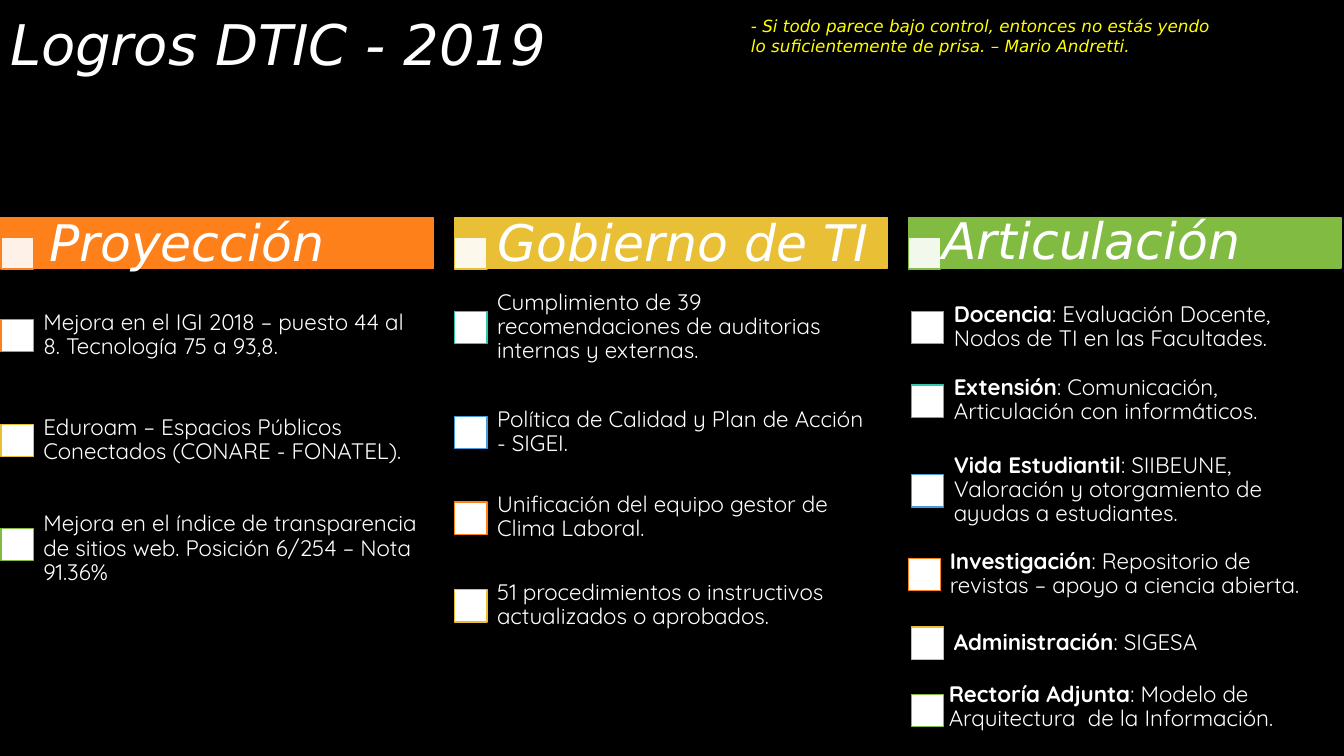
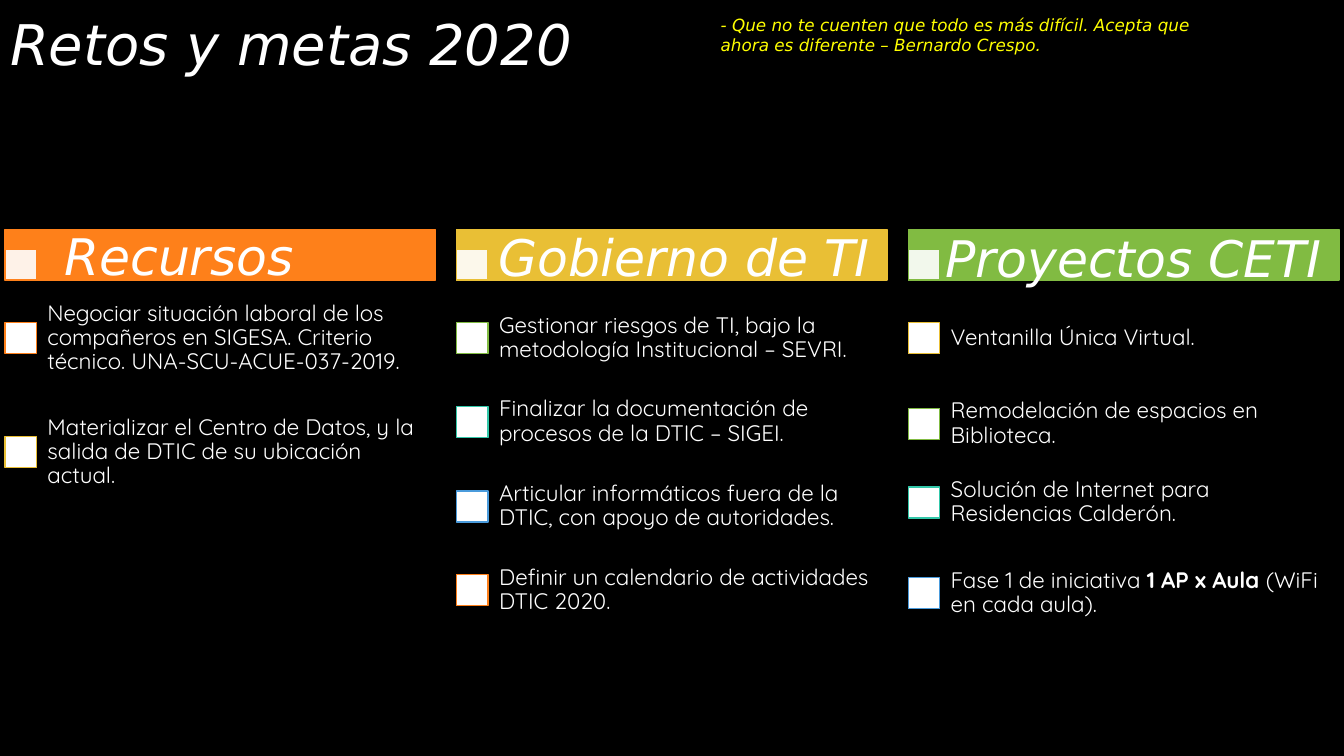
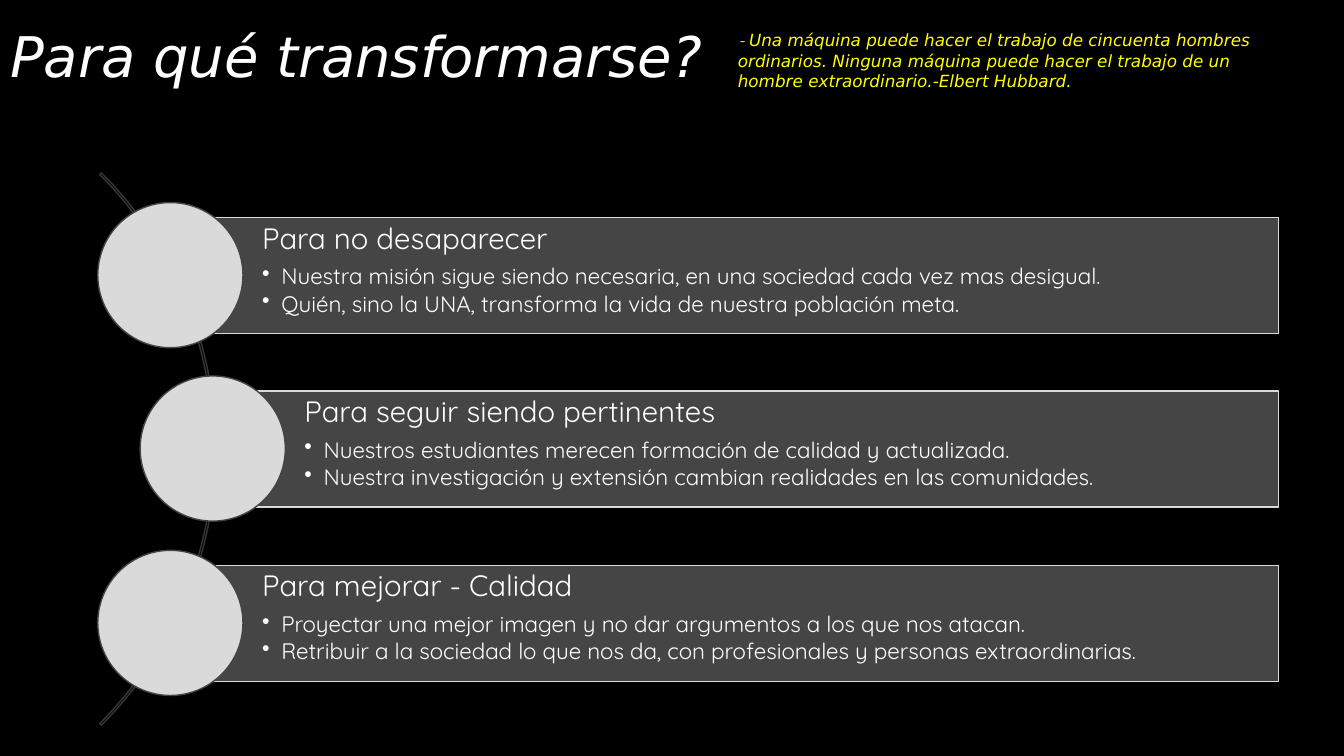
from dataclasses import dataclass

import pptx
import pptx.util
import pptx.dml.color
import pptx.enum.shapes
import pptx.enum.text
import pptx.oxml.ns
from lxml import etree

Pt = pptx.util.Pt
SHAPE = pptx.enum.shapes.MSO_SHAPE
ANCHOR = pptx.enum.text.MSO_ANCHOR
qn = pptx.oxml.ns.qn
EMU_PER_PX = 9144  # 100 px to the inch


# Shared style
@dataclass(frozen=True)
class Theme:
    black: str = "000000"
    white: str = "FFFFFF"
    yellow: str = "FFFF00"
    orange: str = "FE801A"
    gold: str = "E9BF35"
    green: str = "81BB42"
    teal: str = "32C7A9"
    blue: str = "4A9BDC"
    dark: str = "454545"
    arc: str = "373737"
    light: str = "DADADA"
    display: str = "DejaVu Sans"
    body: str = "Quicksand"
    title_size: int = 40
    heading_size: int = 36
    topic_size: int = 21
    body_size: int = 16
    quote_size: int = 12


T = Theme()


@dataclass
class Item:
    text: str  # bold parts stand between ** marks
    y: int
    color: str
    shift: int = 0  # marker offset from the column edge
    dx: int = 30  # text offset from the marker
    dy: int = -21


@dataclass
class Column:
    name: str
    name_box: tuple
    color: str
    items: list


def px(n):
    return pptx.util.Emu(n * EMU_PER_PX)


def rgb(color):
    return pptx.dml.color.RGBColor.from_string(color)


class Deck:
    def __init__(self):
        self.prs = pptx.Presentation()
        self.prs.slide_width, self.prs.slide_height = px(1333), px(750)
        fill = self.prs.slide_master.background.fill
        fill.solid()
        fill.fore_color.rgb = rgb(T.black)
        self.s = None

    def slide(self, title, top, width):
        self.s = self.prs.slides.add_slide(self.prs.slide_layouts[5])
        sp = self.s.shapes.title
        sp.left, sp.top, sp.width, sp.height = map(px, (0, top, width, 77))
        tf = self.frame(sp, (10, 5, 10, 5))
        self.add_text(tf.paragraphs[0], title, T.title_size, T.display, italic=True)

    def frame(self, sp, insets, anchor=ANCHOR.TOP):
        tf = sp.text_frame
        tf.word_wrap = True
        tf.auto_size = pptx.enum.text.MSO_AUTO_SIZE.NONE
        tf.vertical_anchor = anchor
        tf.margin_left, tf.margin_top, tf.margin_right, tf.margin_bottom = map(px, insets)
        return tf

    def add_text(self, p, text, size, font=T.body, color=T.white, italic=None):
        p.alignment = pptx.enum.text.PP_ALIGN.LEFT
        for i, part in enumerate(text.split("**")):
            if part:
                r = p.add_run()
                r.text = part
                r.font.size, r.font.name = Pt(size), font
                r.font.color.rgb = rgb(color)
                r.font.bold, r.font.italic = i % 2 == 1, italic

    def textbox(self, box, insets=(10, 5, 10, 5), anchor=ANCHOR.TOP):
        sp = self.s.shapes.add_textbox(*map(px, box))
        return self.frame(sp, insets, anchor).paragraphs[0]

    def quote(self, box, *parts):
        p = self.textbox(box)
        for text, font in parts:
            self.add_text(p, text, T.quote_size, font, T.yellow, True)

    def shape(self, kind, box, fill, line, opacity=None):
        sp = self.s.shapes.add_shape(kind, *map(px, box))
        sp.shadow.inherit = False
        if fill:
            sp.fill.solid()
            sp.fill.fore_color.rgb = rgb(fill)
        else:
            sp.fill.background()
        if opacity:
            clr = sp._element.spPr.find(qn("a:solidFill")).find(qn("a:srgbClr"))
            etree.SubElement(clr, qn("a:alpha")).set("val", str(opacity * 1000))
        sp.line.color.rgb = rgb(line)
        sp.line.width = Pt(1)
        return sp

    def item(self, x, item, marker, width):
        x += item.shift
        self.shape(SHAPE.RECTANGLE, (x, item.y, marker, marker), T.white, item.color)
        box = (x + item.dx, item.y + item.dy, width, 73)
        p = self.textbox(box, (12, 12, 12, 12), ANCHOR.MIDDLE)
        p.line_spacing = 0.9
        self.add_text(p, item.text, T.body_size)

    def board(self, left, top, step, marker, columns):
        width = step - 21
        for i, col in enumerate(columns):
            x = left + i * step
            self.shape(SHAPE.RECTANGLE, (x, top, width, 50), col.color, col.color)
            self.shape(SHAPE.RECTANGLE, (x, top + 19, marker, marker), T.white, col.color, 90)
            for item in col.items:
                self.item(x, item, marker, width - 30)
            self.add_text(self.textbox(col.name_box), col.name, T.heading_size,
                          T.display, italic=True)

    def reason(self, x, y, topic, bullets):
        sp = self.shape(SHAPE.RECTANGLE, (x, y, 1268 - x, 115), T.dark, T.light)
        tf = self.frame(sp, (91, 6, 6, 6))
        p = tf.paragraphs[0]
        p.line_spacing, p.space_after = 0.9, Pt(7)
        self.add_text(p, topic, T.topic_size)
        for text in bullets:
            p = tf.add_paragraph()
            pPr = p._p.get_or_add_pPr()
            pPr.set("marL", str(px(19)))
            pPr.set("indent", str(px(-19)))
            etree.SubElement(pPr, qn("a:buChar")).set("char", "•")
            p.level = 1
            p.line_spacing, p.space_after = 0.9, Pt(2.4)
            self.add_text(p, text, T.body_size)
        self.shape(SHAPE.OVAL, (x - 72, y - 15, 144, 144), T.light, T.dark)


ACHIEVEMENTS = [
    Column("Proyección", (39, 204, 357, 71), T.orange, [
        Item("Mejora en el IGI 2018 – puesto 44 al 8. Tecnología 75 a 93,8.", 317, T.orange),
        Item("Eduroam – Espacios Públicos Conectados (CONARE - FONATEL).", 421, T.gold),
        Item("Mejora en el índice de transparencia de sitios web. "
             "Posición 6/254 – Nota 91.36%", 524, T.green, dy=-16),
    ]),
    Column("Gobierno de TI", (484, 204, 405, 71), T.gold, [
        Item("Cumplimiento de 39 recomendaciones de auditorias internas y externas.",
             309, T.teal),
        Item("Política de Calidad y Plan de Acción - SIGEI.", 413, T.blue),
        Item("Unificación del equipo gestor de Clima Laboral.", 498, T.orange),
        Item("51 procedimientos o instructivos actualizados o aprobados.", 585, T.gold),
    ]),
    Column("Articulación", (925, 203, 357, 71), T.green, [
        Item("**Docencia**: Evaluación Docente, Nodos de TI en las Facultades.",
             309, T.green, 3),
        Item("**Extensión**: Comunicación, Articulación con informáticos.", 382, T.teal, 3),
        Item("**Vida Estudiantil**: SIIBEUNE, Valoración y otorgamiento de ayudas "
             "a estudiantes.", 471, T.blue, 3),
        Item("**Investigación**: Repositorio de revistas – apoyo a ciencia abierta.",
             554, T.orange, dx=29),
        Item("**Administración**: SIGESA", 622, T.gold, 3, dy=-20),
        Item("**Rectoría Adjunta**: Modelo de Arquitectura  de la Información.",
             689, T.green, 3, dx=25, dy=-24),
    ]),
]

GOALS = [
    Column("Recursos", (54, 218, 357, 71), T.orange, [
        Item("Negociar situación laboral de los compañeros en SIGESA. "
             "Criterio técnico. UNA-SCU-ACUE-037-2019.", 320, T.orange),
        Item("Materializar el Centro de Datos, y la salida de DTIC de su ubicación actual.",
             433, T.gold),
    ]),
    Column("Gobierno de TI", (485, 219, 398, 71), T.gold, [
        Item("Gestionar riesgos de TI, bajo la metodología Institucional – SEVRI.",
             320, T.green),
        Item("Finalizar la documentación de procesos de la DTIC – SIGEI.", 403, T.teal),
        Item("Articular informáticos fuera de la DTIC, con apoyo de autoridades.",
             487, T.blue),
        Item("Definir un calendario de actividades DTIC 2020.", 570, T.orange),
    ]),
    Column("Proyectos CETI", (928, 220, 409, 71), T.green, [
        Item("Ventanilla Única Virtual.", 320, T.gold),
        Item("Remodelación de espacios en Biblioteca.", 405, T.green),
        Item("Solución de Internet para Residencias Calderón.", 483, T.teal),
        Item("Fase 1 de iniciativa **1 AP x Aula **(WiFi en cada aula).", 573, T.blue),
    ]),
]

REASONS = [
    (169, "Para no desaparecer", [
        "Nuestra misión sigue siendo necesaria, en una sociedad cada vez mas desigual.",
        "Quién, sino la UNA, transforma la vida de nuestra población meta."]),
    (211, "Para seguir siendo pertinentes", [
        "Nuestros estudiantes merecen formación de calidad y actualizada.",
        "Nuestra investigación y extensión cambian realidades en las comunidades."]),
    (169, "Para mejorar - Calidad", [
        "Proyectar una mejor imagen y no dar argumentos a los que nos atacan.",
        "Retribuir a la sociedad lo que nos da, con profesionales y personas "
        "extraordinarias."]),
]


def main():
    deck = Deck()

    # Achievements
    deck.slide("Logros DTIC - 2019", 4, 577)
    deck.quote((735, 11, 483, 50),
               ("- Si todo parece bajo control, entonces no estás yendo lo "
                "suficientemente de prisa. – Mario Andretti.", T.display))
    deck.board(1, 216, 450, 32, ACHIEVEMENTS)

    # Goals
    deck.slide("Retos y metas 2020", 4, 592)
    deck.quote((705, 10, 527, 50),
               ("- Que no te cuenten que todo es más difícil. Acepta que ahora "
                "es diferente – Bernardo Crespo.", T.display))
    deck.board(5, 228, 448, 31, GOALS)

    # Reasons along an arc
    deck.slide("Para qué transformarse?", 16, 734)
    arc = deck.shape(SHAPE.BLOCK_ARC, (-561, 58, 775, 775), None, T.arc)
    for i, value in enumerate((189, 27, 0.003)):
        arc.adjustments[i] = value
    for i, (x, topic, bullets) in enumerate(REASONS):
        deck.reason(x, 216 + i * 345 // 2, topic, bullets)
    deck.quote((722, 25, 554, 91),
               ("- ", T.body),
               ("Una máquina puede hacer el trabajo de cincuenta hombres ordinarios. "
                "Ninguna máquina puede hacer el trabajo de un hombre "
                "extraordinario.-Elbert Hubbard.", T.display))

    deck.prs.save("out.pptx")


if __name__ == "__main__":
    main()
